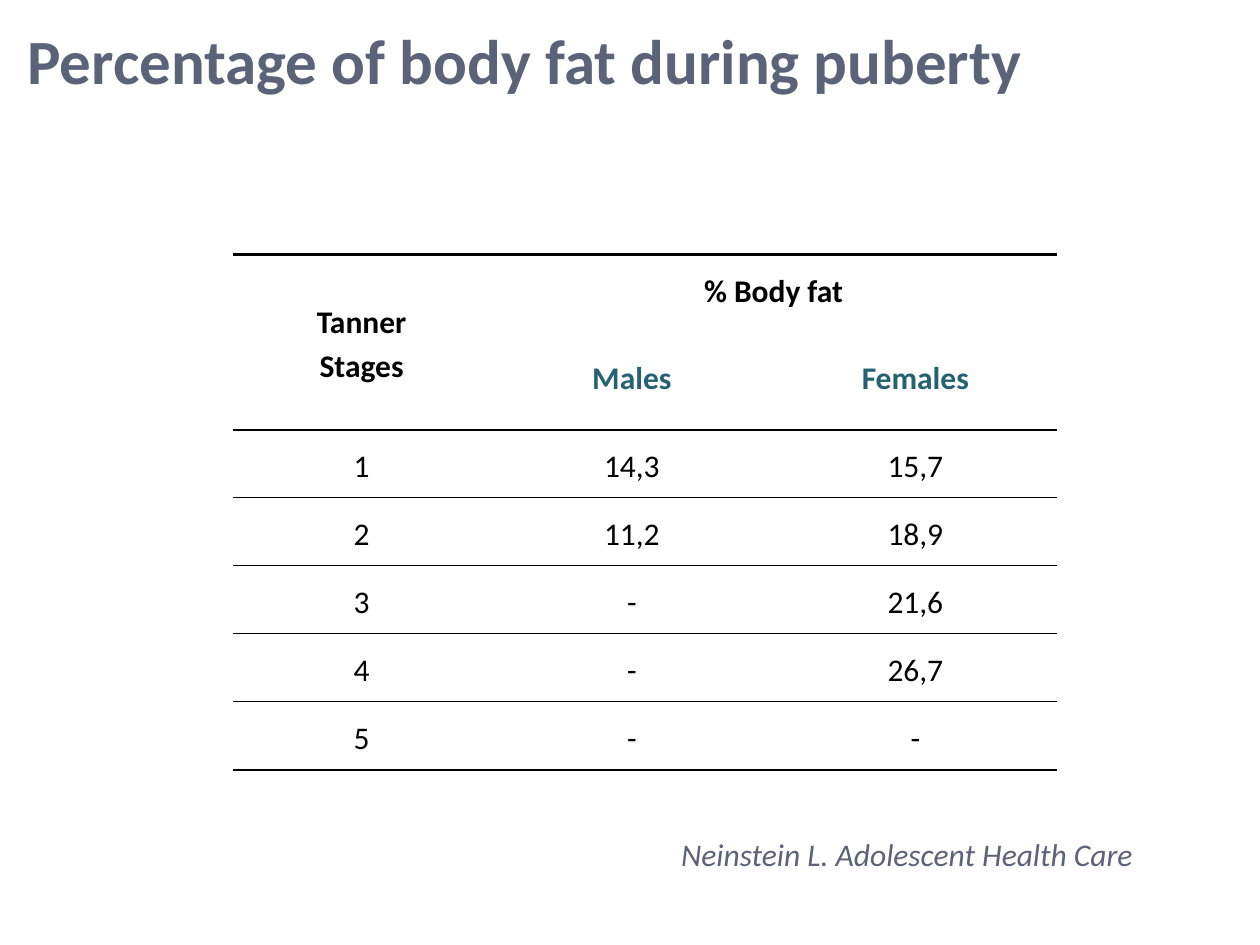
from lxml import etree
from pptx import Presentation
from pptx.dml.color import RGBColor
from pptx.enum.text import MSO_ANCHOR, PP_ALIGN
from pptx.oxml.ns import qn
from pptx.util import Inches, Pt

FONT = "Calibri"
SLATE, TEAL, BLACK = "5A6378", "246172", "000000"

HEAD = [["Tanner\nStages", "% Body fat", ""], ["", "Males", "Females"]]
BODY = [
    ["1", "14,3", "15,7"],
    ["2", "11,2", "18,9"],
    ["3", "-", "21,6"],
    ["4", "-", "26,7"],
    ["5", "-", "-"],
]
COLS = [2.04, 2.25, 2.25]
ROWS = [0.54, 0.85] + [0.54] * len(BODY)
# Rule widths in points, from the top edge to the bottom edge
RULES = [1.5, 0, 1.5, 1, 1, 1, 1, 1.5]


def color(code):
    return RGBColor.from_string(code)


def add_run(para, text, size, code, bold=False, italic=False):
    run = para.add_run()
    run.text = text
    font = run.font
    font.name, font.size = FONT, Pt(size)
    font.bold, font.italic = bold, italic
    font.color.rgb = color(code)


def add_box(slide, box):
    frame = slide.shapes.add_textbox(*map(Inches, box)).text_frame
    frame.word_wrap = True
    return frame


def add_title(slide, box):
    frame = add_box(slide, box)
    frame.margin_top = Inches(0.08)
    para = frame.paragraphs[0]
    para.line_spacing = 0.8
    add_run(para, "Percentage of body fat during puberty", 36, SLATE, bold=True)


def add_source(slide, box):
    para = add_box(slide, box).paragraphs[0]
    para.alignment = PP_ALIGN.RIGHT
    add_run(para, "Neinstein L. Adolescent Health Care", 18, SLATE, italic=True)


def set_rules(cell, top, bottom):
    props = cell._tc.get_or_add_tcPr()
    for tag, width in (("lnL", 0), ("lnR", 0), ("lnT", top), ("lnB", bottom)):
        line = etree.SubElement(props, qn("a:" + tag), w=str(Pt(width)))
        if width:
            fill = etree.SubElement(line, qn("a:solidFill"))
            etree.SubElement(fill, qn("a:srgbClr"), val=BLACK)
        else:
            etree.SubElement(line, qn("a:noFill"))
    cell.fill.background()


def fill_cell(cell, text, code, bold, side):
    cell.vertical_anchor = MSO_ANCHOR.MIDDLE
    cell.margin_left = cell.margin_right = Inches(side)
    cell.margin_top = cell.margin_bottom = 0
    frame = cell.text_frame
    for i, words in enumerate(text.split("\n")):
        para = frame.add_paragraph() if i else frame.paragraphs[0]
        para.alignment = PP_ALIGN.CENTER
        para.line_spacing = 1.15
        add_run(para, words, 18, code, bold)


def add_grid(slide, box):
    data = HEAD + BODY
    table = slide.shapes.add_table(len(data), len(COLS), *map(Inches, box)).table
    table.first_row = table.horz_banding = False
    for col, width in zip(table.columns, COLS):
        col.width = Inches(width)
    for row, height in zip(table.rows, ROWS):
        row.height = Inches(height)

    # Header spans
    table.cell(0, 0).merge(table.cell(1, 0))
    table.cell(0, 1).merge(table.cell(0, 2))

    for r, line in enumerate(data):
        for c, text in enumerate(line):
            cell = table.cell(r, c)
            end = r + (cell.span_height if cell.is_merge_origin else 1)
            set_rules(cell, RULES[r], RULES[end])
            if text:
                sex = r == 1
                fill_cell(cell, text, TEAL if sex else BLACK,
                          r < len(HEAD), 0 if sex else 0.07)


def main():
    deck = Presentation()
    deck.slide_width, deck.slide_height = Inches(10), Inches(7.5)
    slide = deck.slides.add_slide(deck.slide_layouts[6])
    add_source(slide, (4.05, 6.58, 5.04, 0.4))
    add_title(slide, (0.12, 0.21, 9.76, 1.08))
    add_grid(slide, (1.85, 2.02, sum(COLS), sum(ROWS)))
    deck.save("out.pptx")


if __name__ == "__main__":
    main()
